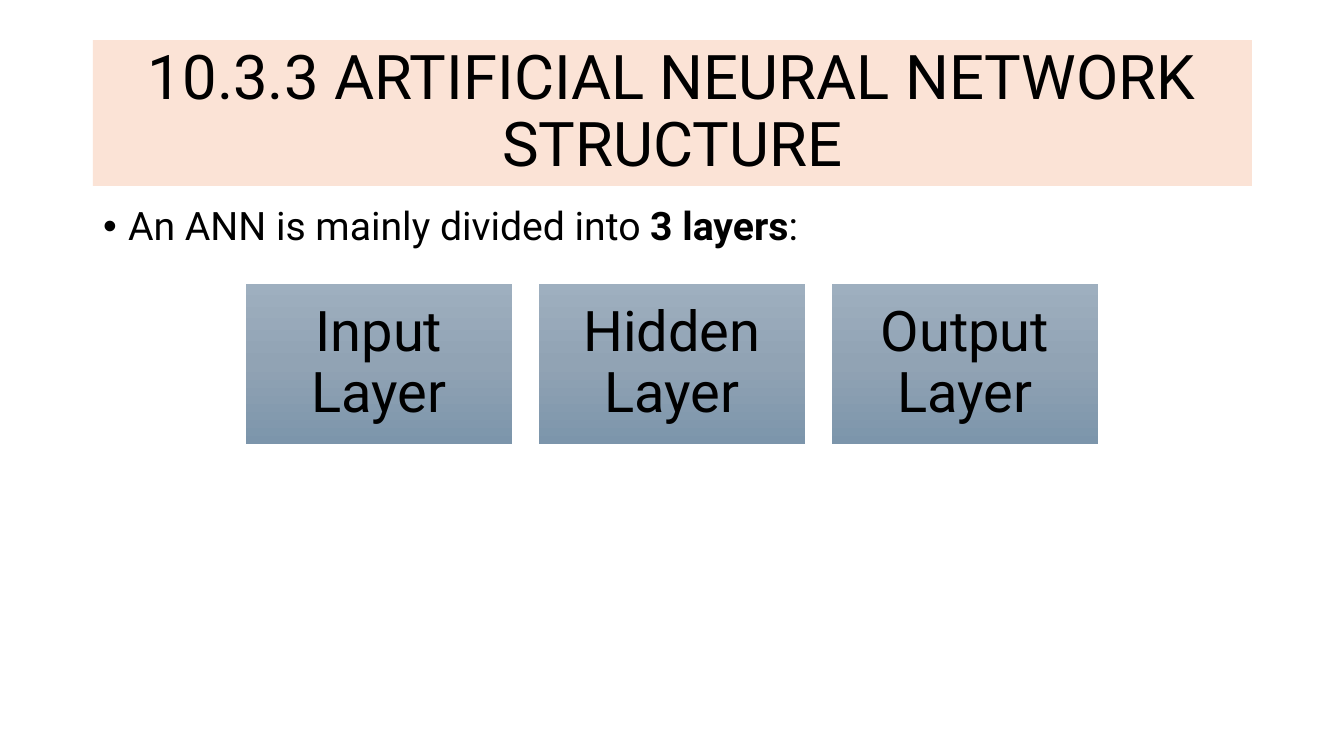
from copy import deepcopy

from pptx import Presentation
from pptx.dml.color import RGBColor
from pptx.enum.shapes import MSO_SHAPE
from pptx.enum.text import MSO_ANCHOR, MSO_AUTO_SIZE, PP_ALIGN
from pptx.oxml.ns import qn
from pptx.util import Emu, Pt

RECTANGLE = MSO_SHAPE.RECTANGLE
MIDDLE, TOP = MSO_ANCHOR.MIDDLE, MSO_ANCHOR.TOP
CENTER, LEFT = PP_ALIGN.CENTER, PP_ALIGN.LEFT
NO_AUTOFIT = MSO_AUTO_SIZE.NONE

BLACK = RGBColor(0x00, 0x00, 0x00)
PEACH = RGBColor(0xFB, 0xE3, 0xD6)
LAYER_TOP_COLOR = RGBColor(0x9E, 0xAF, 0xBF)
LAYER_MIDDLE_COLOR = RGBColor(0x91, 0xA3, 0xB4)
LAYER_BOTTOM_COLOR = RGBColor(0x7C, 0x95, 0xAB)


def px(length):
    return Emu(round(length * 914400 / 100.8))


def format_text(shape, size, alignment, anchor):
    frame = shape.text_frame
    frame.auto_size = NO_AUTOFIT
    frame.word_wrap = True
    frame.vertical_anchor = anchor
    paragraph = frame.paragraphs[0]
    paragraph.alignment = alignment
    paragraph.line_spacing = 0.9
    paragraph.space_before = Pt(0)
    for run in paragraph.runs:
        run.font.name = "Roboto"
        run.font.size = Pt(size)
        run.font.color.rgb = BLACK


presentation = Presentation()
presentation.slide_width, presentation.slide_height = px(1344), px(756)
slide = presentation.slides.add_slide(presentation.slide_layouts[1])

title = slide.shapes.title
title.left, title.top, title.width, title.height = px(93), px(40), px(1159), px(146)
title.fill.solid()
title.fill.fore_color.rgb = PEACH
title.text_frame.text = "10.3.3 ARTIFICIAL NEURAL NETWORK STRUCTURE"
format_text(title, 44, CENTER, MIDDLE)

body = slide.placeholders[1]
body.left, body.top, body.width, body.height = px(93), px(202), px(1159), px(480)
paragraph = body.text_frame.paragraphs[0]
for text, bold in (("An ANN is mainly divided into ", False), ("3 layers", True), (":", False)):
    run = paragraph.add_run()
    run.text = text
    run.font.bold = bold
format_text(body, 28, LEFT, TOP)
properties = paragraph._p.get_or_add_pPr()
properties.set("marL", str(px(25)))
properties.set("indent", str(-px(25)))
bullet = properties.makeelement(qn("a:buChar"), {"char": "•"})
properties.append(bullet)

LAYER_WIDTH, LAYER_GAP = 266, 27
for index, name in enumerate(("Input Layer", "Hidden Layer", "Output Layer")):
    left = 246 + index * (LAYER_WIDTH + LAYER_GAP)
    layer = slide.shapes.add_shape(RECTANGLE, px(left), px(284), px(LAYER_WIDTH), px(160))
    layer.shadow.inherit = False
    layer.line.fill.background()
    layer.fill.gradient()
    layer.fill.gradient_angle = 270
    first_stop = layer._element.spPr.find(".//" + qn("a:gs"))
    first_stop.addnext(deepcopy(first_stop))
    colors = (LAYER_TOP_COLOR, LAYER_MIDDLE_COLOR, LAYER_BOTTOM_COLOR)
    for stop, position, color in zip(layer.fill.gradient_stops, (0, 0.5, 1), colors):
        stop.position = position
        stop.color.rgb = color
    frame = layer.text_frame
    frame.margin_left = frame.margin_right = px(17)
    frame.margin_top = frame.margin_bottom = px(17)
    frame.text = name
    format_text(layer, 40, CENTER, MIDDLE)

presentation.save("out.pptx")
